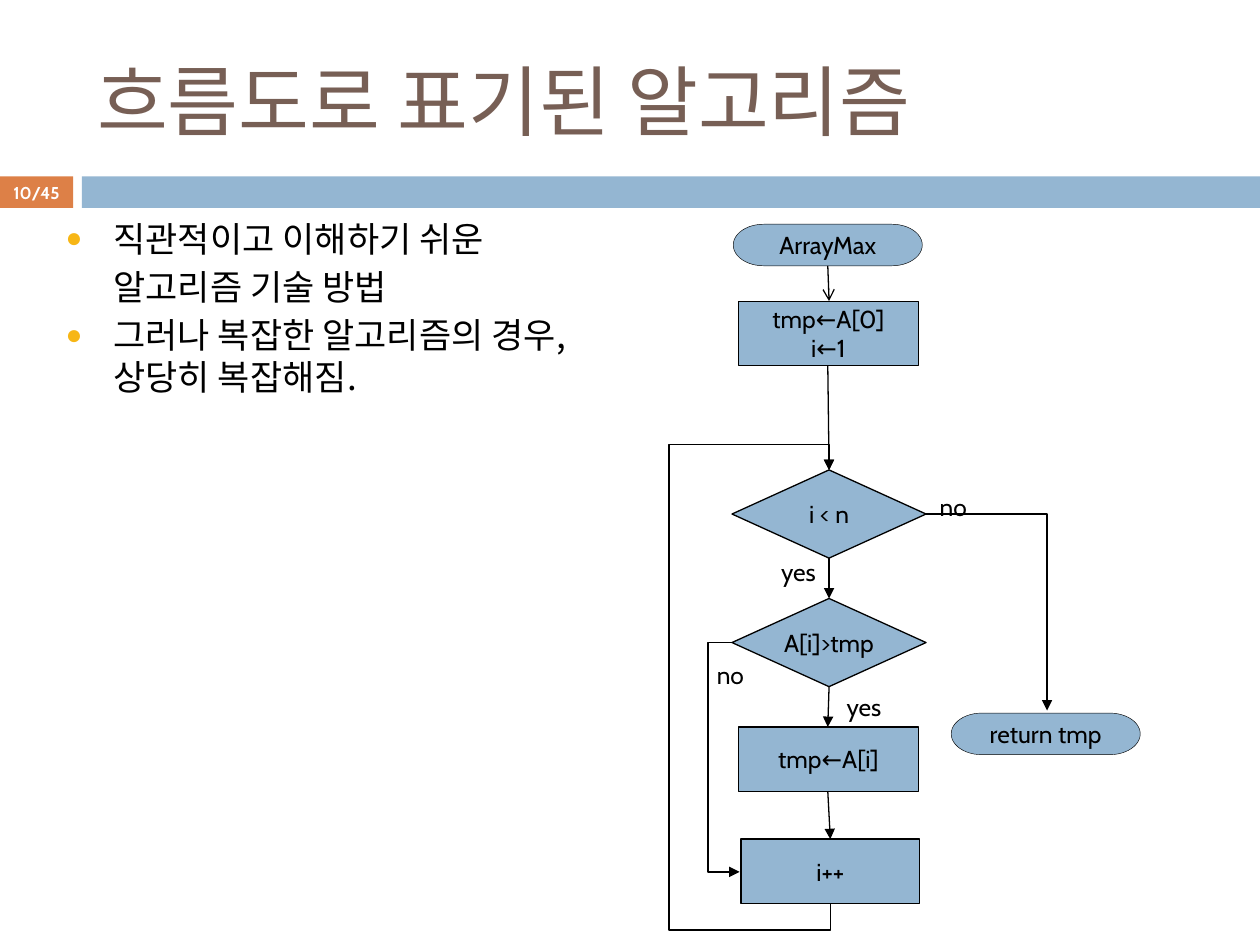
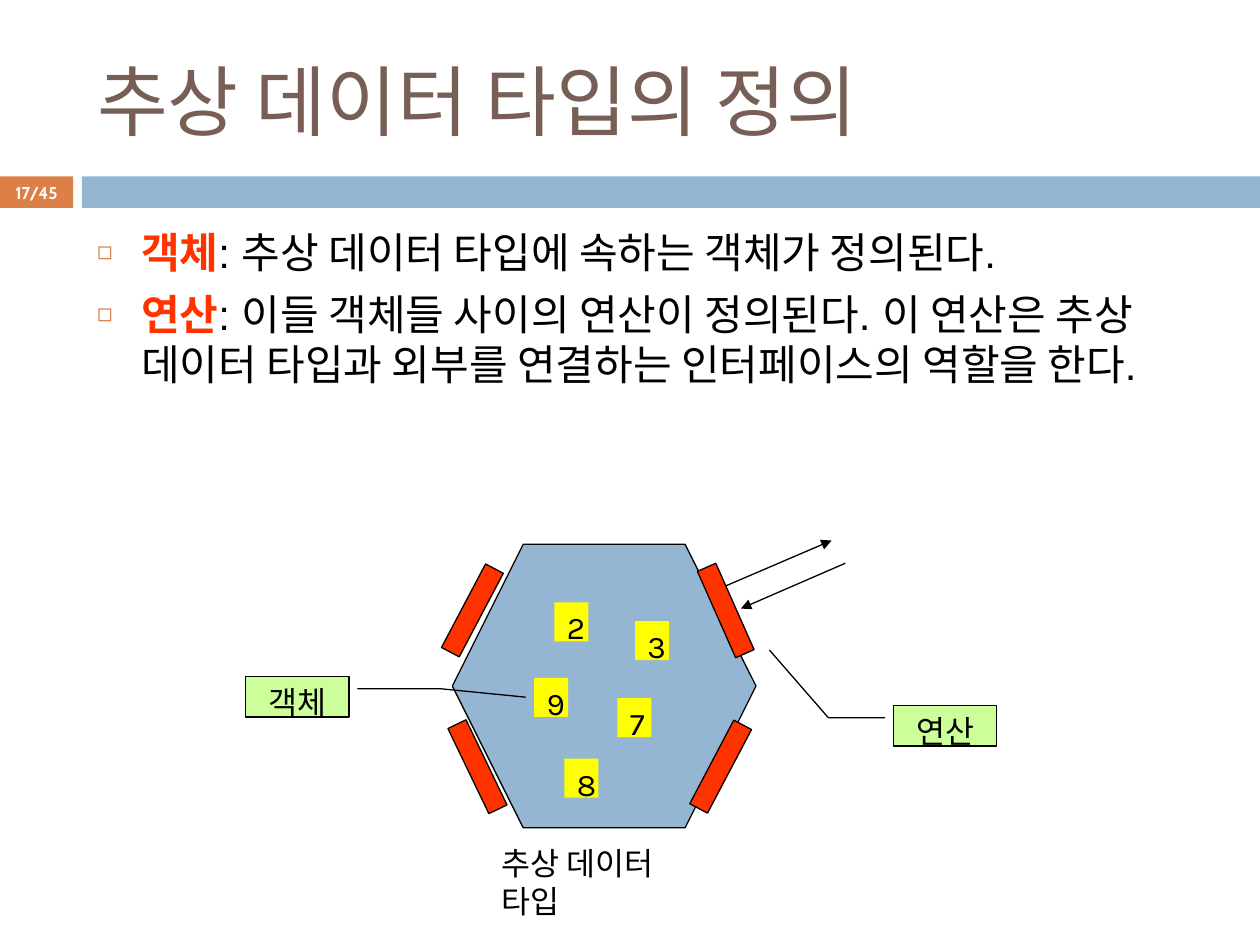
from pptx import Presentation
from pptx.dml.color import RGBColor
from pptx.enum.shapes import MSO_CONNECTOR, MSO_SHAPE
from pptx.enum.text import MSO_ANCHOR, MSO_AUTO_SIZE, PP_ALIGN
from pptx.oxml.xmlchemy import OxmlElement
from pptx.util import Inches, Pt

BLUE, ORANGE, BROWN = "94B6D2", "DD8047", "775F55"
RED, YELLOW, GREEN, GOLD = "FF3300", "FFFF00", "CCFF99", "F7B615"
BLACK, WHITE = "000000", "FFFFFF"
HANGUL = "Noto Sans CJK KR"


def color(code):
    return RGBColor.from_string(code)


def add_element(parent, tag, **attributes):
    element = OxmlElement(tag)
    for name, value in attributes.items():
        element.set(name, str(value))
    parent.append(element)
    return element


def set_bullet(para, indent, char, code, percent):
    """Hang the paragraph by indent; without a char it only lines up."""
    properties = para._p.get_or_add_pPr()
    properties.set("marL", str(Inches(indent)))
    properties.set("indent", str(-Inches(indent) if char else 0))
    if not char:
        add_element(properties, "a:buNone")
        return
    add_element(add_element(properties, "a:buClr"), "a:srgbClr", val=code)
    add_element(properties, "a:buSzPct", val=percent * 1000)
    add_element(properties, "a:buChar", char=char)


def write(frame, paragraphs, size=14, font="Cabin", ink=BLACK, bold=False,
          align=PP_ALIGN.LEFT, anchor=MSO_ANCHOR.TOP, wrap=True, margin=None,
          gap=0, leading=None, bullets=None):
    """Each paragraph is a list of (text, ink, bold) spans or a plain string."""
    frame.word_wrap = wrap
    frame.auto_size = MSO_AUTO_SIZE.NONE
    frame.vertical_anchor = anchor
    if margin is not None:
        frame.margin_left = frame.margin_right = Inches(margin)
        frame.margin_top = frame.margin_bottom = Inches(margin)
    for index, content in enumerate(paragraphs):
        para = frame.add_paragraph() if index else frame.paragraphs[0]
        if bullets:
            set_bullet(para, *bullets[index])
        para.alignment = align
        para.space_before = Pt(gap if index else 0)
        if leading:
            para.line_spacing = Pt(leading)
        spans = [(content, ink, bold)] if isinstance(content, str) else content
        for text, span_ink, span_bold in spans:
            span = para.add_run()
            span.text = text
            span.font.size = Pt(size)
            span.font.bold = span_bold
            span.font.color.rgb = color(span_ink)
            span.font.name = font
            add_element(span._r.get_or_add_rPr(), "a:ea", typeface=HANGUL)


class Deck:
    def __init__(self):
        self.file = Presentation()
        self.file.slide_width, self.file.slide_height = Inches(10), Inches(7.5)
        self.page = None

    def new_page(self, title, number):
        """Title, number box and band, the same on every slide."""
        self.page = self.file.slides.add_slide(self.file.slide_layouts[1])
        holder = self.place(self.page.shapes.title, 0.67, 0.25, 8.92, 1.08)
        write(holder.text_frame, [title], size=44, ink=BROWN,
              anchor=MSO_ANCHOR.MIDDLE)
        self.shape(MSO_SHAPE.RECTANGLE, 0.65, 1.4, 9.35, 0.25, BLUE, None)
        self.shape(MSO_SHAPE.RECTANGLE, 0, 1.4, 0.58, 0.25, ORANGE, None,
                   [number], size=9.8, ink=WHITE, bold=True, wrap=False,
                   margin=0, align=PP_ALIGN.CENTER, anchor=MSO_ANCHOR.MIDDLE)

    def place(self, holder, left, top, width, height):
        holder.left, holder.top = Inches(left), Inches(top)
        holder.width, holder.height = Inches(width), Inches(height)
        return holder

    def body(self, left, top, width, height, paragraphs, **style):
        holder = self.place(self.page.placeholders[1], left, top, width, height)
        write(holder.text_frame, paragraphs, **style)

    def shape(self, kind, left, top, width, height, fill, line=0.75,
              paragraphs=None, **style):
        box = self.page.shapes.add_shape(
            kind, Inches(left), Inches(top), Inches(width), Inches(height))
        box.shadow.inherit = False
        box.fill.solid()
        box.fill.fore_color.rgb = color(fill)
        if line:
            self.outline(box, line)
        else:
            box.line.fill.background()
        if paragraphs:
            write(box.text_frame, paragraphs, **style)
        return box

    def label(self, left, top, width, height, text, **style):
        box = self.page.shapes.add_textbox(
            Inches(left), Inches(top), Inches(width), Inches(height))
        write(box.text_frame, [text], **style)

    def outline(self, item, width, head=None):
        item.line.color.rgb = color(BLACK)
        item.line.width = Pt(width)
        if head:
            add_element(item.line._get_or_add_ln(), "a:tailEnd", type=head)

    def arrow(self, start, end, head="triangle"):
        line = self.page.shapes.add_connector(
            MSO_CONNECTOR.STRAIGHT, *map(Inches, start + end))
        self.outline(line, 0.75, head)
        add_element(line._element.spPr, "a:effectLst")

    def route(self, start, *corners):
        """An open path with corners and an arrowhead at its end."""
        builder = self.page.shapes.build_freeform(*map(Inches, start))
        builder.add_line_segments(
            [(Inches(x), Inches(y)) for x, y in corners], close=False)
        path = builder.convert_to_shape()
        path.shadow.inherit = False
        path.fill.background()
        self.outline(path, 0.75, "triangle")

    def flow_box(self, kind, left, top, width, height, *lines, line=0.75):
        self.shape(kind, left, top, width, height, BLUE, line, lines, wrap=False,
                   align=PP_ALIGN.CENTER, anchor=MSO_ANCHOR.MIDDLE)


def build_flowchart(deck):
    deck.new_page("흐름도로 표기된 알고리즘", "10/45")
    dot = (0.38, "●", GOLD, 80)
    deck.body(0.42, 1.68, 4.68, 5.23,
              ["직관적이고 이해하기 쉬운", "알고리즘 기술 방법",
               "그러나 복잡한 알고리즘의 경우, 상당히 복잡해짐."],
              size=20, font=HANGUL, gap=4, leading=23.6,
              bullets=[dot, (0.38, None, None, None), dot])

    # Steps
    terminator = MSO_SHAPE.FLOWCHART_TERMINATOR
    process, decision = MSO_SHAPE.FLOWCHART_PROCESS, MSO_SHAPE.FLOWCHART_DECISION
    deck.flow_box(terminator, 5.82, 1.78, 1.5, 0.33, "ArrayMax", line=0.25)
    deck.flow_box(process, 5.86, 2.39, 1.43, 0.51, "tmp←A[0]", "i←1")
    deck.flow_box(decision, 5.81, 3.73, 1.54, 0.7, "i < n")
    deck.flow_box(decision, 5.81, 4.75, 1.54, 0.7, "A[i]>tmp")
    deck.flow_box(process, 5.86, 5.77, 1.43, 0.51, "tmp←A[i]")
    deck.flow_box(process, 5.88, 6.66, 1.42, 0.51, "i++")
    deck.flow_box(terminator, 7.55, 5.66, 1.5, 0.33, "return tmp", line=0.25)

    # Arrows down the middle
    deck.arrow((6.57, 2.11), (6.58, 2.39), head="arrow")
    deck.arrow((6.57, 2.9), (6.58, 3.73))
    deck.arrow((6.58, 4.43), (6.58, 4.75))
    deck.arrow((6.58, 5.45), (6.57, 5.77))
    deck.arrow((6.57, 6.28), (6.59, 6.66))

    # Skip, exit and loop
    deck.route((5.81, 5.1), (5.62, 5.1), (5.62, 6.92), (5.87, 6.92))
    deck.route((7.34, 4.08), (8.31, 4.08), (8.31, 5.64))
    deck.route((6.59, 7.17), (6.59, 7.38), (5.31, 7.38), (5.31, 3.53),
               (6.58, 3.53), (6.58, 3.73))

    # Answers
    for left, top, width, answer in [(7.36, 3.86, 0.41, "no"),
                                     (6.1, 4.37, 0.49, "yes"),
                                     (5.59, 5.19, 0.41, "no"),
                                     (6.62, 5.44, 0.49, "yes")]:
        deck.label(left, top, width, 0.33, answer, wrap=False)


def build_data_type(deck):
    deck.new_page("추상 데이터 타입의 정의", "17/45")
    square = (0.35, "◻", ORANGE, 60)
    operations = (": 이들 객체들 사이의 연산이 정의된다. 이 연산은 추상 데이터 타입과 "
                  "외부를 연결하는 인터페이스의 역할을 한다.")
    deck.body(0.67, 1.75, 8.92, 4.92,
              [[("객체", RED, True),
                (": 추상 데이터 타입에 속하는 객체가 정의된다.", BLACK, False)],
               [("연산", RED, True), (operations, BLACK, False)]],
              size=24, font="Arial", gap=7, leading=28.6,
              bullets=[square, square])

    # Data type with its objects
    hexagon = deck.shape(MSO_SHAPE.HEXAGON, 3.59, 4.32, 2.41, 2.25, BLUE)
    hexagon.adjustments[0] = 0.25
    for left, top, value in [(4.4, 4.78, "2"), (5.04, 4.93, "3"),
                             (4.24, 5.38, "9"), (4.9, 5.54, "7"),
                             (4.48, 6.02, "8")]:
        deck.shape(MSO_SHAPE.RECTANGLE, left, top, 0.27, 0.31, YELLOW, None,
                   [value], size=18, font="Karla")

    # Operations on the sides
    for left, top, angle in [(5.68, 4.47, 336.1), (5.64, 5.71, 27.8),
                             (3.67, 4.47, 27.8), (3.71, 5.71, 334.3)]:
        bar = deck.shape(MSO_SHAPE.RECTANGLE, left, top, 0.16, 0.75, RED)
        bar.rotation = angle
    deck.arrow((6.71, 4.47), (5.88, 4.83))
    deck.arrow((5.76, 4.65), (6.6, 4.29))

    # Callouts and caption
    for left, top, name, leader in [
            (7.09, 5.6, "연산", (0.3, -0.08, 0.3, -0.63, -1.38, -1.2)),
            (1.95, 5.37, "객체", (0.3, 1.08, 0.3, 1.88, 0.51, 2.71))]:
        callout = deck.shape(MSO_SHAPE.LINE_CALLOUT_2, left, top, 0.82, 0.32,
                             GREEN, 0.75, [name], size=18, font=HANGUL,
                             leading=21.6, align=PP_ALIGN.CENTER)
        for index, value in enumerate(leader):
            callout.adjustments[index] = value
    deck.label(3.88, 6.65, 1.73, 0.31, "추상 데이터 타입", size=18, font=HANGUL,
               leading=21.6)


def main():
    deck = Deck()
    build_flowchart(deck)
    build_data_type(deck)
    deck.file.save("out.pptx")


if __name__ == "__main__":
    main()
